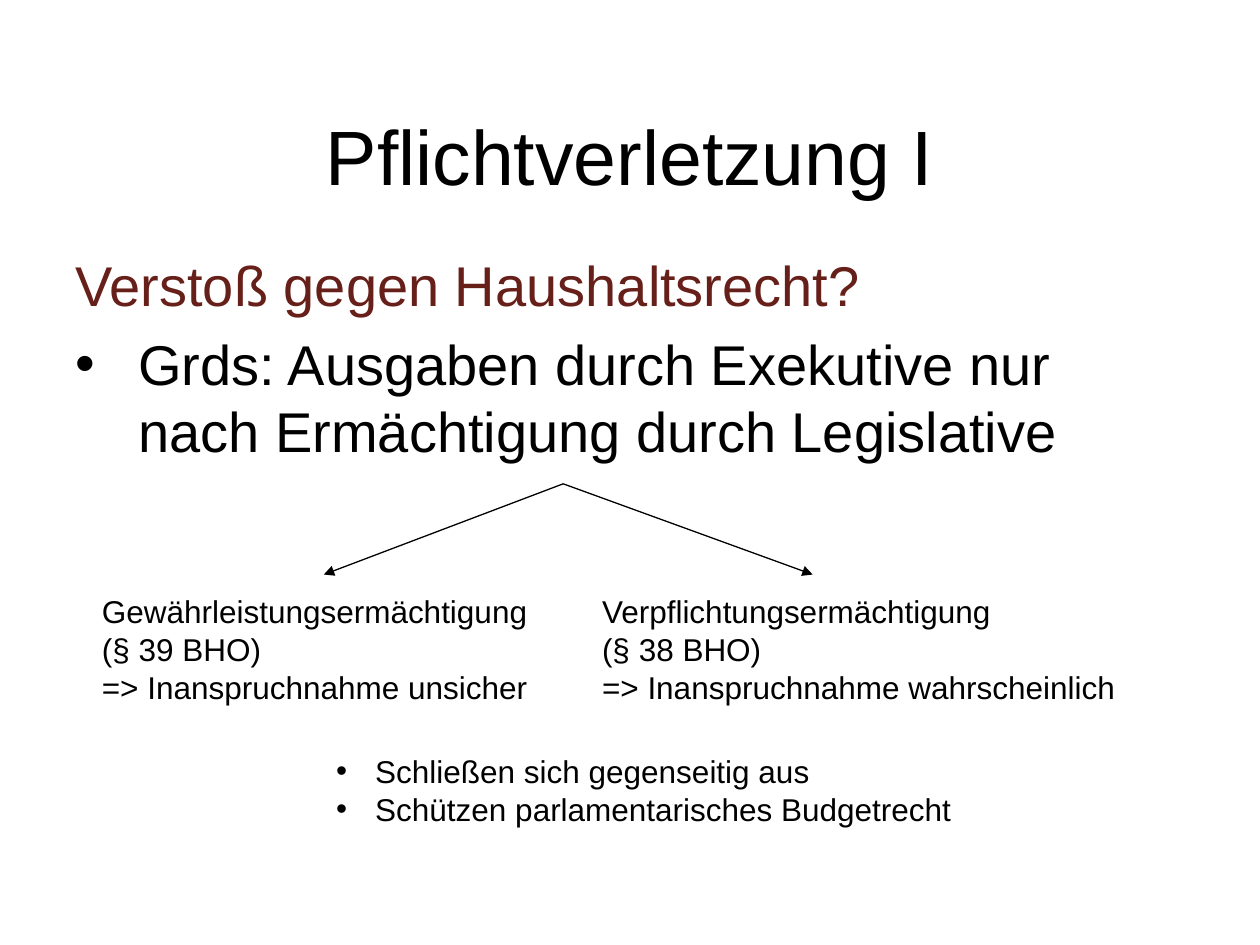
from dataclasses import dataclass

import pptx
import pptx.dml.color
import pptx.enum.shapes
import pptx.enum.text
import pptx.oxml.ns
import pptx.util
from lxml import etree
from pptx.util import Inches


@dataclass(frozen=True)
class Theme:
    font: str = "Arial"
    black: str = "000000"
    accent: str = "671F1A"
    title: int = 44
    body: int = 32
    small: int = 18


theme = Theme()
rgb = pptx.dml.color.RGBColor.from_string
qn = pptx.oxml.ns.qn

prs = pptx.Presentation()
prs.slide_width, prs.slide_height = Inches(10), Inches(7.5)
s = prs.slides.add_slide(prs.slide_layouts[6])


def add_text(box, lines, size):
    """Add a wrapped text box with one paragraph per line and return its text frame."""
    sp = s.shapes.add_textbox(*(Inches(v) for v in box))
    tf = sp.text_frame
    tf.word_wrap = True
    tf.text = "\n".join(lines)
    for p in tf.paragraphs:
        for r in p.runs:
            r.font.name = theme.font
            r.font.size = pptx.util.Pt(size)
            r.font.color.rgb = rgb(theme.black)
    return tf


def add_bullet(p, indent):
    pPr = p._p.get_or_add_pPr()
    pPr.set("marL", str(Inches(indent)))
    pPr.set("indent", str(-Inches(indent)))
    etree.SubElement(pPr, qn("a:buFont"), typeface=theme.font)
    etree.SubElement(pPr, qn("a:buChar"), char="•")


# Title
tf = add_text((0.5, 0.6, 9, 1.25), ["Pflichtverletzung I"], theme.title)
tf.vertical_anchor = pptx.enum.text.MSO_ANCHOR.MIDDLE
tf.paragraphs[0].alignment = pptx.enum.text.PP_ALIGN.CENTER

# Question and principle
tf = add_text((0.5, 1.94, 9, 4.68), [
    "Verstoß gegen Haushaltsrecht?",
    "Grds: Ausgaben durch Exekutive nur nach Ermächtigung durch Legislative",
], theme.body)
question, principle = tf.paragraphs
question.runs[0].font.color.rgb = rgb(theme.accent)
principle.space_before = pptx.util.Pt(6.4)
add_bullet(principle, 0.5)

# Arrows branching to the two kinds of authorisation
branches = s.shapes.add_group_shape()
for end_x in (2.57, 6.45):
    arrow = branches.shapes.add_connector(
        pptx.enum.shapes.MSO_CONNECTOR.STRAIGHT,
        Inches(4.47), Inches(3.84), Inches(end_x), Inches(4.56))
    arrow.line.color.rgb = rgb(theme.black)
    arrow.line.width = pptx.util.Pt(0.75)
    etree.SubElement(arrow.line._get_or_add_ln(), qn("a:tailEnd"), type="triangle")
    etree.SubElement(arrow._element.spPr, qn("a:effectLst"))

# The two kinds of authorisation
add_text((0.71, 4.65, 3.69, 1.01), [
    "Gewährleistungsermächtigung (§ 39 BHO)",
    "=> Inanspruchnahme unsicher",
], theme.small)
add_text((4.68, 4.65, 4.5, 1.01), [
    "Verpflichtungsermächtigung",
    "(§ 38 BHO)",
    "=> Inanspruchnahme wahrscheinlich",
], theme.small)

# What both have in common
tf = add_text((2.57, 5.92, 5.43, 0.71), [
    "Schließen sich gegenseitig aus",
    "Schützen parlamentarisches Budgetrecht",
], theme.small)
for p in tf.paragraphs:
    add_bullet(p, 0.31)

prs.save("out.pptx")
